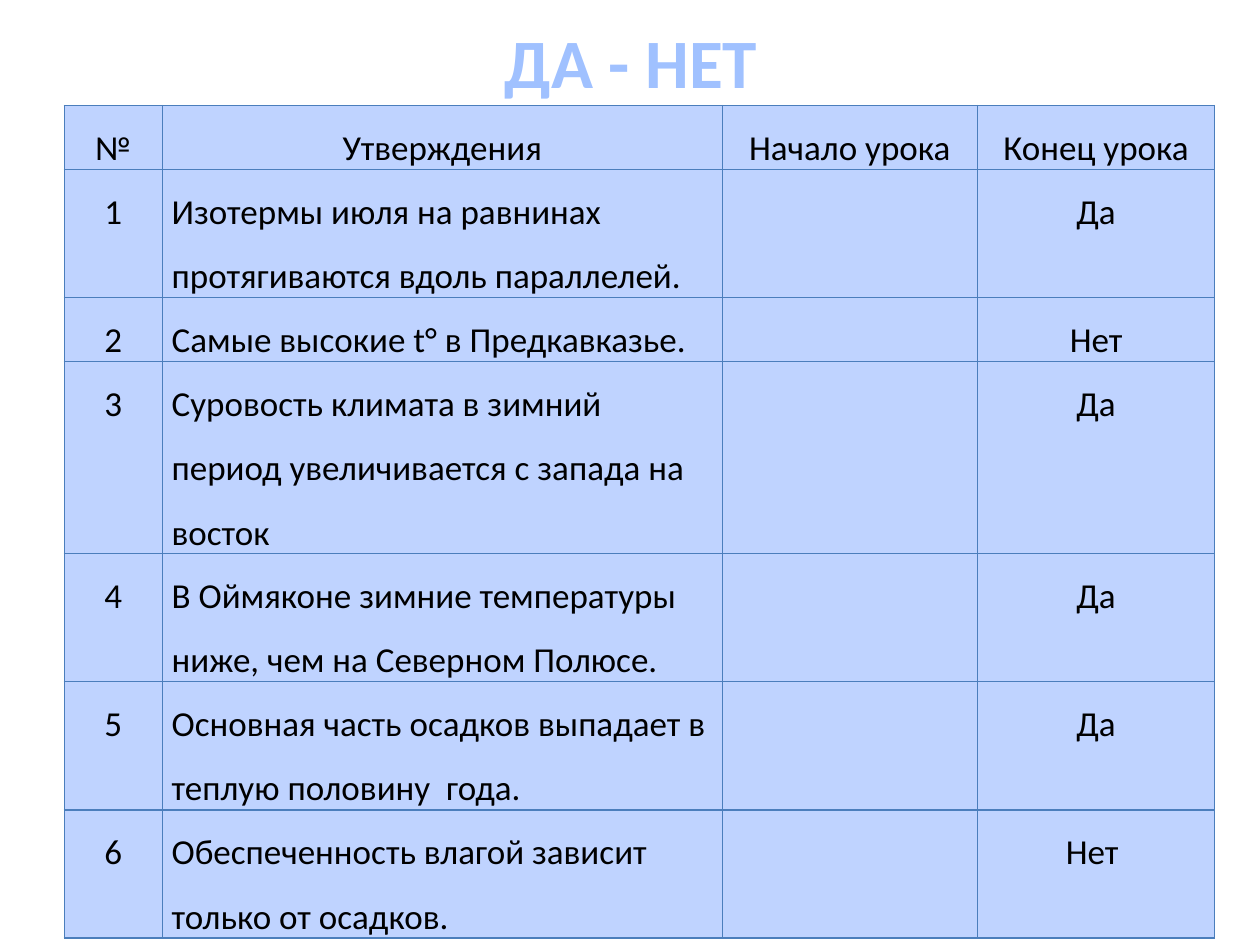
from typing import NamedTuple

from lxml import etree
from pptx import Presentation
from pptx.dml.color import RGBColor
from pptx.enum.text import MSO_ANCHOR, PP_ALIGN
from pptx.oxml.ns import qn
from pptx.util import Pt

CENTER, LEFT = PP_ALIGN.CENTER, PP_ALIGN.LEFT
MIDDLE, TOP = MSO_ANCHOR.MIDDLE, MSO_ANCHOR.TOP
FONT = "Calibri"
COLORS = {"title": "A0C1FF", "cell": "BFD3FF", "border": "4B7EBC", "text": "000000"}
COLUMN_WIDTHS = (56, 320.2, 145.6, 135.8)
LINE_HEIGHT = 36.6
TABLE_LEFT, TABLE_TOP = 36.7, 60.3


class Statement(NamedTuple):
    number: str
    claim: str
    start: str
    end: str
    lines: int


HEADER = Statement("№", "Утверждения", "Начало урока", "Конец урока", 1)
STATEMENTS = (
    Statement("1", "Изотермы июля на равнинах протягиваются вдоль параллелей.", "", "Да", 2),
    Statement("2", "Самые высокие t° в Предкавказье.", "", "Нет", 1),
    Statement("3", "Суровость климата в зимний период увеличивается с запада на восток", "", "Да", 3),
    Statement("4", "В Оймяконе зимние температуры ниже, чем на Северном Полюсе.", "", "Да", 2),
    Statement("5", "Основная часть осадков выпадает в теплую половину  года.", "", "Да", 2),
    Statement("6", "Обеспеченность влагой зависит только от осадков.", "", "Нет ", 2),
)


def write(frame, text: str, *, size: float, color: str, align=CENTER,
          bold: bool = False, spacing: float = 1.0) -> None:
    paragraph = frame.paragraphs[0]
    paragraph.alignment = align
    paragraph.line_spacing = spacing
    run = paragraph.add_run()
    run.text = text
    run.font.name = FONT
    run.font.size = Pt(size)
    run.font.bold = bold
    run.font.color.rgb = RGBColor.from_string(COLORS[color])


def draw_borders(cell) -> None:
    properties = cell._tc.get_or_add_tcPr()
    for position, side in enumerate(("lnL", "lnR", "lnT", "lnB")):
        line = etree.Element(qn(f"a:{side}"), w=str(Pt(0.75)))
        fill = etree.SubElement(line, qn("a:solidFill"))
        etree.SubElement(fill, qn("a:srgbClr"), val=COLORS["border"])
        properties.insert(position, line)


def draw_cell(cell, text: str, align) -> None:
    cell.margin_left = cell.margin_right = Pt(5.4)
    cell.margin_top = cell.margin_bottom = Pt(0)
    cell.vertical_anchor = TOP
    cell.fill.solid()
    cell.fill.fore_color.rgb = RGBColor.from_string(COLORS["cell"])
    draw_borders(cell)
    if text:
        write(cell.text_frame, text, size=20, color="text", align=align, spacing=1.5)


def draw_title(slide) -> None:
    title = slide.shapes.add_textbox(Pt(36.7), Pt(9.4), Pt(648), Pt(51))
    title.text_frame.word_wrap = True
    title.text_frame.vertical_anchor = MIDDLE
    write(title.text_frame, "ДА - НЕТ", size=39.6, color="title", bold=True)


def draw_table(slide, rows: tuple[Statement, ...]) -> None:
    height = LINE_HEIGHT * sum(row.lines for row in rows)
    table = slide.shapes.add_table(
        len(rows), len(COLUMN_WIDTHS), Pt(TABLE_LEFT), Pt(TABLE_TOP),
        Pt(sum(COLUMN_WIDTHS)), Pt(height)).table
    for column, width in zip(table.columns, COLUMN_WIDTHS):
        column.width = Pt(width)
    for row_index, row in enumerate(rows):
        table.rows[row_index].height = Pt(LINE_HEIGHT * row.lines)
        claim_align = CENTER if row is HEADER else LEFT
        aligns = (CENTER, claim_align, CENTER, CENTER)
        texts = (row.number, row.claim, row.start, row.end)
        for column_index, (text, align) in enumerate(zip(texts, aligns)):
            draw_cell(table.cell(row_index, column_index), text, align)


def main() -> None:
    presentation = Presentation()
    presentation.slide_width, presentation.slide_height = Pt(720), Pt(540)
    slide = presentation.slides.add_slide(presentation.slide_layouts[6])
    draw_title(slide)
    draw_table(slide, (HEADER, *STATEMENTS))
    presentation.save("out.pptx")


if __name__ == "__main__":
    main()
